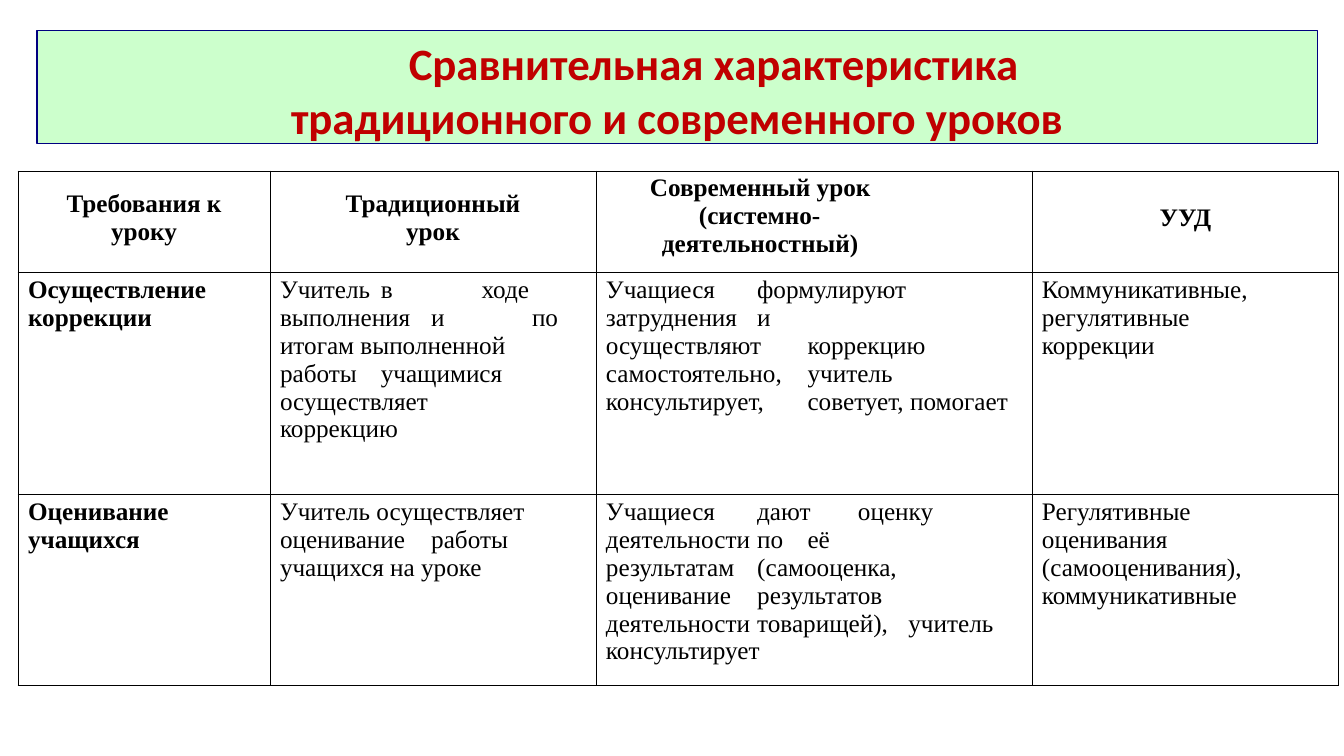
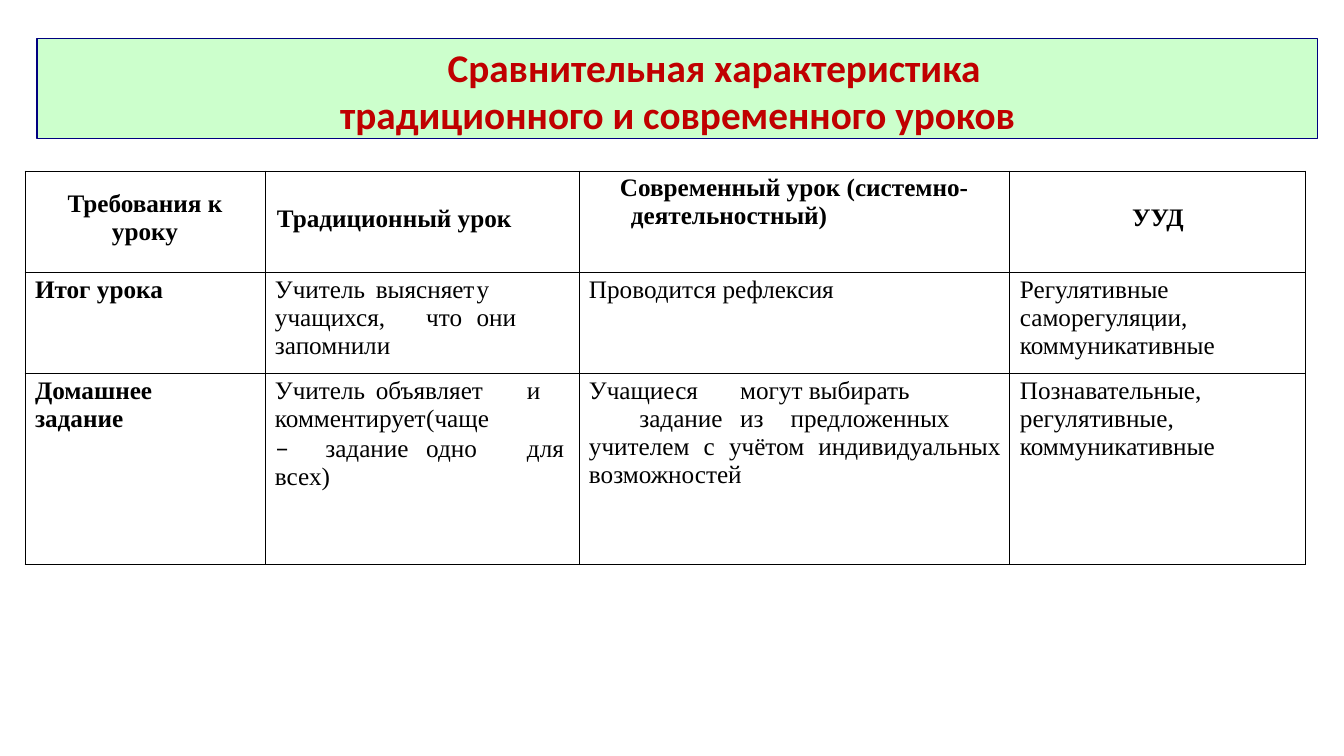
from dataclasses import dataclass

from lxml.etree import SubElement
from pptx import Presentation
from pptx.dml.color import RGBColor
from pptx.enum.text import MSO_ANCHOR, MSO_AUTO_SIZE, PP_ALIGN
from pptx.oxml.ns import qn
from pptx.util import Pt

PX = 914400 / 100.8


def px(length):
    return round(length * PX)


@dataclass(frozen=True)
class Theme:
    accent: str = "C00000"
    band: str = "CCFFCC"
    band_edge: str = "000080"
    ink: str = "000000"
    title_font: str = "Calibri"
    body_font: str = "Times New Roman"
    dash_font: str = "Lato"
    body_size: int = 18
    edge: float = 0.75


@dataclass(frozen=True)
class Line:
    text: str
    stops: tuple = ()
    left: int = 10
    first: int = 0
    right: int = 0
    align: PP_ALIGN = PP_ALIGN.LEFT
    lead: str = ""


@dataclass(frozen=True)
class Cell:
    lines: tuple
    top: int = 4


class LessonDeck:
    """Holds the theme and the current slide, and draws its elements."""

    def __init__(self):
        self.theme = Theme()
        self.deck = Presentation()
        self.deck.slide_width, self.deck.slide_height = px(1344), px(756)
        self.slide = None

    def add_slide(self):
        self.slide = self.deck.slides.add_slide(self.deck.slide_layouts[5])

    def style(self, run, font, size, colour, bold):
        formats = {"name": font, "size": Pt(size), "bold": bold}
        for name, value in formats.items():
            setattr(run.font, name, value)
        run.font.color.rgb = RGBColor.from_string(colour)

    def set_lines(self, frame, lines, font, size, colour, bold):
        for number, line in enumerate(lines):
            paragraph = frame.add_paragraph() if number else frame.paragraphs[0]
            formats = {"alignment": line.align, "line_spacing": 1.0,
                       "space_before": Pt(0), "space_after": Pt(0)}
            for name, value in formats.items():
                setattr(paragraph, name, value)
            properties = paragraph._p.get_or_add_pPr()
            margins = {"marL": line.left, "marR": line.right, "indent": line.first}
            for name, value in margins.items():
                properties.set(name, str(px(value)))
            if line.stops:
                tabs = SubElement(properties, qn("a:tabLst"))
                for position, side in line.stops:
                    SubElement(tabs, qn("a:tab"), pos=str(px(position)), algn=side)
            for text, face in ((line.lead, self.theme.dash_font), (line.text, font)):
                if text:
                    run = paragraph.add_run()
                    run.text = text
                    self.style(run, face, size, colour, bold)

    def title(self, top, height, size, lines):
        theme = self.theme
        band = self.slide.shapes.title
        place = {"left": 37, "top": top, "width": 1281, "height": height}
        for name, value in place.items():
            setattr(band, name, px(value))
        band.fill.solid()
        band.fill.fore_color.rgb = RGBColor.from_string(theme.band)
        band.line.color.rgb = RGBColor.from_string(theme.band_edge)
        band.line.width = Pt(theme.edge)
        frame = band.text_frame
        formats = {"margin_left": 0, "margin_right": 0, "margin_top": px(4),
                   "margin_bottom": 0, "word_wrap": True,
                   "vertical_anchor": MSO_ANCHOR.MIDDLE,
                   "auto_size": MSO_AUTO_SIZE.SHAPE_TO_FIT_TEXT}
        for name, value in formats.items():
            setattr(frame, name, value)
        self.set_lines(frame, lines, theme.title_font, size, theme.accent, True)
        frame.paragraphs[0].space_before = Pt(3)

    def border(self, cell):
        properties = cell._tc.get_or_add_tcPr()
        for side in ("lnL", "lnR", "lnT", "lnB"):
            edge = SubElement(properties, qn("a:" + side), w=str(Pt(self.theme.edge)))
            fill = SubElement(edge, qn("a:solidFill"))
            SubElement(fill, qn("a:srgbClr"), val=self.theme.ink)

    def table(self, left, widths, heights, rows):
        theme = self.theme
        table = self.slide.shapes.add_table(
            len(heights), len(widths), px(left), px(171),
            px(sum(widths)), px(sum(heights))).table
        table.first_row = table.horz_banding = False
        for column, width in zip(table.columns, widths):
            column.width = px(width)
        for row, height in zip(table.rows, heights):
            row.height = px(height)
        for r, contents in enumerate(rows):
            for c, content in enumerate(contents):
                cell = table.cell(r, c)
                formats = {"margin_left": 0, "margin_right": 0, "margin_bottom": 0,
                           "margin_top": px(content.top),
                           "vertical_anchor": MSO_ANCHOR.TOP}
                for name, value in formats.items():
                    setattr(cell, name, value)
                self.border(cell)
                cell.fill.background()
                self.set_lines(cell.text_frame, content.lines, theme.body_font,
                               theme.body_size, theme.ink, r == 0 or c == 0)

    def save(self):
        self.deck.save("out.pptx")


def body(*lines):
    return Cell(tuple(Line(line) if isinstance(line, str) else line for line in lines))


def heading(top, *texts):
    return Cell(tuple(Line(text, left=0, align=PP_ALIGN.CENTER) for text in texts), top)


def modern_heading(hanging, left, right):
    return Cell((Line("Современный урок (системно-", left=hanging, first=-49, right=right),
                 Line("деятельностный)", left=left)), 3)


def spread(text, edge, *starts):
    return Line(text, tuple((start, "l") for start in starts) + ((edge, "r"),))


def tabbed(text, *starts, lead=""):
    return Line(text, tuple((start, "l") for start in starts), lead=lead)


TITLE = (
    Line("Сравнительная характеристика", left=77, first=73, right=77, align=PP_ALIGN.CENTER),
    Line("традиционного и современного уроков", left=77, right=77, align=PP_ALIGN.CENTER),
)
REQUIREMENTS = heading(19, "Требования к", "уроку")
ACTIONS = heading(33, "УУД")
MODERN_EDGE = 417
TRADITIONAL_EDGE = 296

CORRECTION = [
    body("Осуществление коррекции"),
    body(tabbed("Учитель\tв\t\tходе выполнения\tи\t\tпо итогам выполненной", 137, 167, 186, 208),
         tabbed("работы\tучащимися осуществляет", 113), "коррекцию"),
    body(spread("Учащиеся\tформулируют", MODERN_EDGE),
         tabbed("затруднения\tи", 304),
         spread("осуществляют\tкоррекцию", MODERN_EDGE),
         spread("самостоятельно,\tучитель", MODERN_EDGE),
         tabbed("консультирует,\tсоветует, помогает", 203)),
    body("Коммуникативные, регулятивные", "коррекции"),
]
ASSESSMENT = [
    body("Оценивание учащихся"),
    body(tabbed("Учитель осуществляет оценивание\tработы учащихся на уроке", 157)),
    body(spread("Учащиеся\tдают\tоценку", MODERN_EDGE, 199),
         spread("деятельности\tпо\tеё", MODERN_EDGE, 257),
         spread("результатам\t(самооценка,", MODERN_EDGE),
         spread("оценивание\tрезультатов", MODERN_EDGE),
         spread("деятельности\tтоварищей),\tучитель", MODERN_EDGE, 192),
         "консультирует"),
    body("Регулятивные", "оценивания", "(самооценивания), коммуникативные"),
]
SUMMARY = [
    body("Итог урока"),
    body(spread("Учитель\tвыясняет\tу", TRADITIONAL_EDGE, 137),
         spread("учащихся,\tчто\tони", TRADITIONAL_EDGE, 166), "запомнили"),
    body("Проводится рефлексия"),
    body("Регулятивные саморегуляции, коммуникативные"),
]
HOMEWORK = [
    body("Домашнее", "задание"),
    body(tabbed("Учитель\tобъявляет\tи", 103, 222),
         tabbed("комментирует\t(чаще", 185),
         tabbed("\tзадание\tодно\tдля", 42, 143, 211, lead="–"), "всех)"),
    body(tabbed("Учащиеся\tмогут выбирать", 229),
         tabbed("\tзадание\tиз\tпредложенных", 26, 188, 231),
         Line("учителем с учётом индивидуальных возможностей", right=9,
              align=PP_ALIGN.JUSTIFY)),
    body("Познавательные, регулятивные, коммуникативные"),
]


def main():
    lessons = LessonDeck()

    lessons.add_slide()
    lessons.title(31, 113, 32, TITLE)
    headings = [REQUIREMENTS, heading(19, "Традиционный", "урок"),
                modern_heading(103, 66, 100), ACTIONS]
    lessons.table(18, (252, 326, 436, 307), (101, 222, 191),
                  (headings, CORRECTION, ASSESSMENT))

    lessons.add_slide()
    lessons.title(38, 100, 28, TITLE)
    headings = [REQUIREMENTS, Cell((Line("Традиционный урок", left=12),), 34),
                modern_heading(90, 52, 0), ACTIONS]
    lessons.table(25, (240, 314, 431, 296), (101, 101, 191),
                  (headings, SUMMARY, HOMEWORK))

    lessons.save()


if __name__ == "__main__":
    main()
